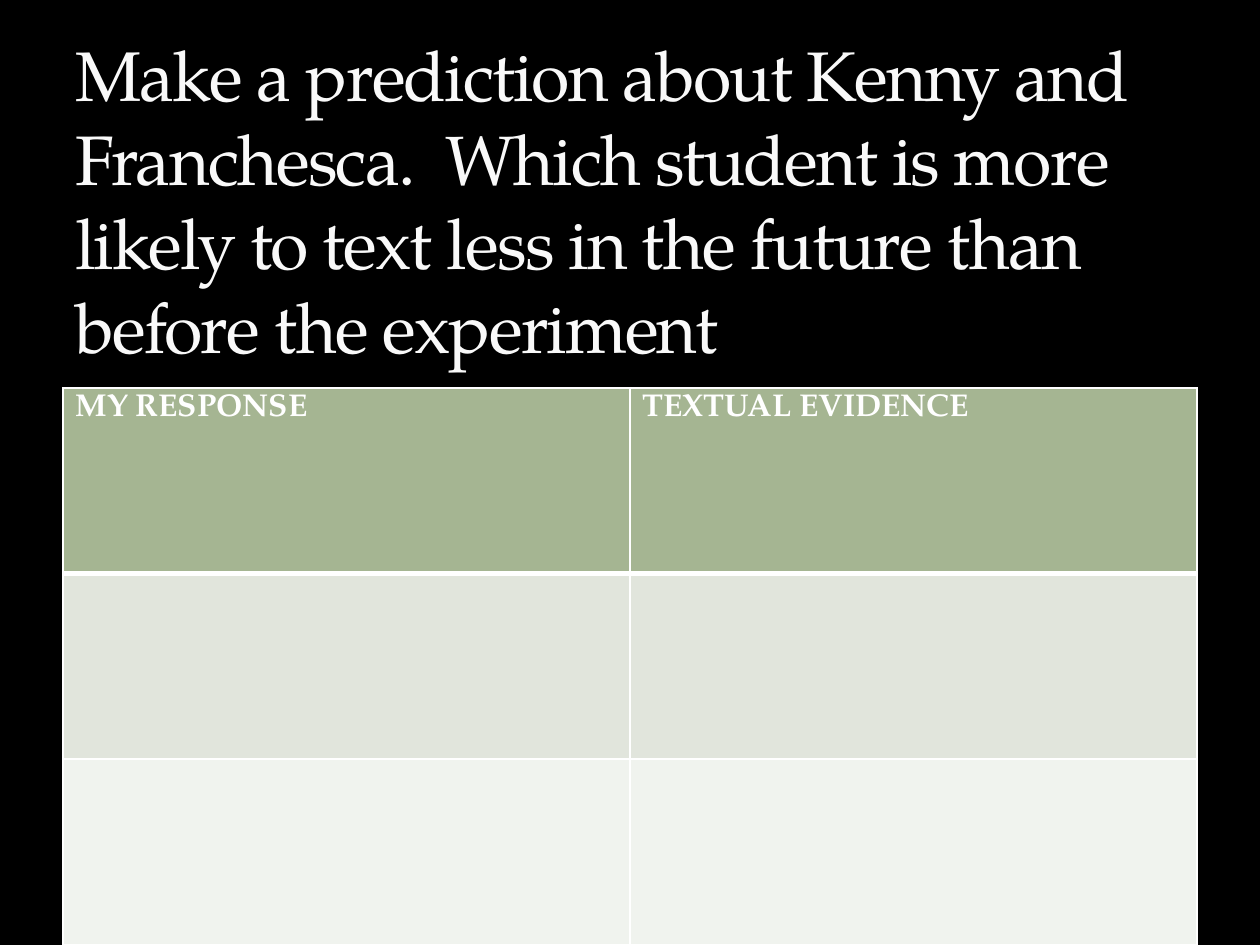
import pptx
import pptx.dml.color
import pptx.enum.text
import pptx.oxml
import pptx.oxml.ns
import pptx.util

EMU_PER_PX = 914400 // 126
FONT = "TeX Gyre Pagella"
BLACK = pptx.dml.color.RGBColor(0x00, 0x00, 0x00)
WHITE = pptx.dml.color.RGBColor(0xFF, 0xFF, 0xFF)
OFF_WHITE = pptx.dml.color.RGBColor(0xF9, 0xF9, 0xF9)
SAGE = pptx.dml.color.RGBColor(0xA5, 0xB5, 0x92)
PALE_SAGE = pptx.dml.color.RGBColor(0xE1, 0xE5, 0xDC)
LIGHT_SAGE = pptx.dml.color.RGBColor(0xF0, 0xF3, 0xEE)


def px(length):
    return pptx.util.Emu(length * EMU_PER_PX)


class SlideBuilder:
    def __init__(self, presentation, background):
        self.slide = presentation.slides.add_slide(presentation.slide_layouts[6])
        fill = self.slide.background.fill
        fill.solid()
        fill.fore_color.rgb = background

    def add_run(self, paragraph, text, size, color, bold=False):
        run = paragraph.add_run()
        run.text = text
        run.font.name = FONT
        run.font.size = pptx.util.Pt(size)
        run.font.bold = bold
        run.font.color.rgb = color
        return run

    def add_title(self, text, left, top, width, height):
        shape = self.slide.shapes.add_textbox(px(left), px(top), px(width), px(height))
        frame = shape.text_frame
        frame.word_wrap = True
        frame.vertical_anchor = pptx.enum.text.MSO_ANCHOR.BOTTOM
        frame.margin_bottom = 0
        run = self.add_run(frame.paragraphs[0], text, 40, OFF_WHITE)
        run.font._element.set("spc", "-100")

    def set_borders(self, cell, widths):
        properties = cell._tc.get_or_add_tcPr()
        for position, (side, width) in enumerate(widths.items()):
            line = pptx.oxml.parse_xml(
                f'<a:{side} {pptx.oxml.ns.nsdecls("a")} w="{pptx.util.Pt(width)}">'
                f'<a:solidFill><a:srgbClr val="{WHITE}"/></a:solidFill></a:{side}>'
            )
            properties.insert(position, line)

    def add_table(self, headings, row_fills, left, top, width, height):
        table = self.slide.shapes.add_table(
            len(row_fills), len(headings), px(left), px(top), px(width), px(height)
        ).table
        for row_index, color in enumerate(row_fills):
            for column_index, heading in enumerate(headings):
                cell = table.cell(row_index, column_index)
                cell.fill.solid()
                cell.fill.fore_color.rgb = color
                top_width = 3 if row_index == 1 else 1
                bottom_width = 3 if row_index == 0 else 1
                self.set_borders(
                    cell, {"lnL": 1, "lnR": 1, "lnT": top_width, "lnB": bottom_width}
                )
                if row_index == 0:
                    paragraph = cell.text_frame.paragraphs[0]
                    self.add_run(paragraph, heading, 18, WHITE, bold=True)


def main():
    presentation = pptx.Presentation()
    presentation.slide_width = pptx.util.Inches(10)
    presentation.slide_height = pptx.util.Inches(7.5)
    builder = SlideBuilder(presentation, BLACK)
    builder.add_table(
        ["MY RESPONSE", "TEXTUAL EVIDENCE"],
        [SAGE, PALE_SAGE, LIGHT_SAGE],
        63, 388, 1134, 557,
    )
    builder.add_title(
        "Make a prediction about Kenny and Franchesca.  Which student is more "
        "likely to text less in the future than before the experiment",
        63, 199, 1134, 168,
    )
    presentation.save("out.pptx")


if __name__ == "__main__":
    main()
